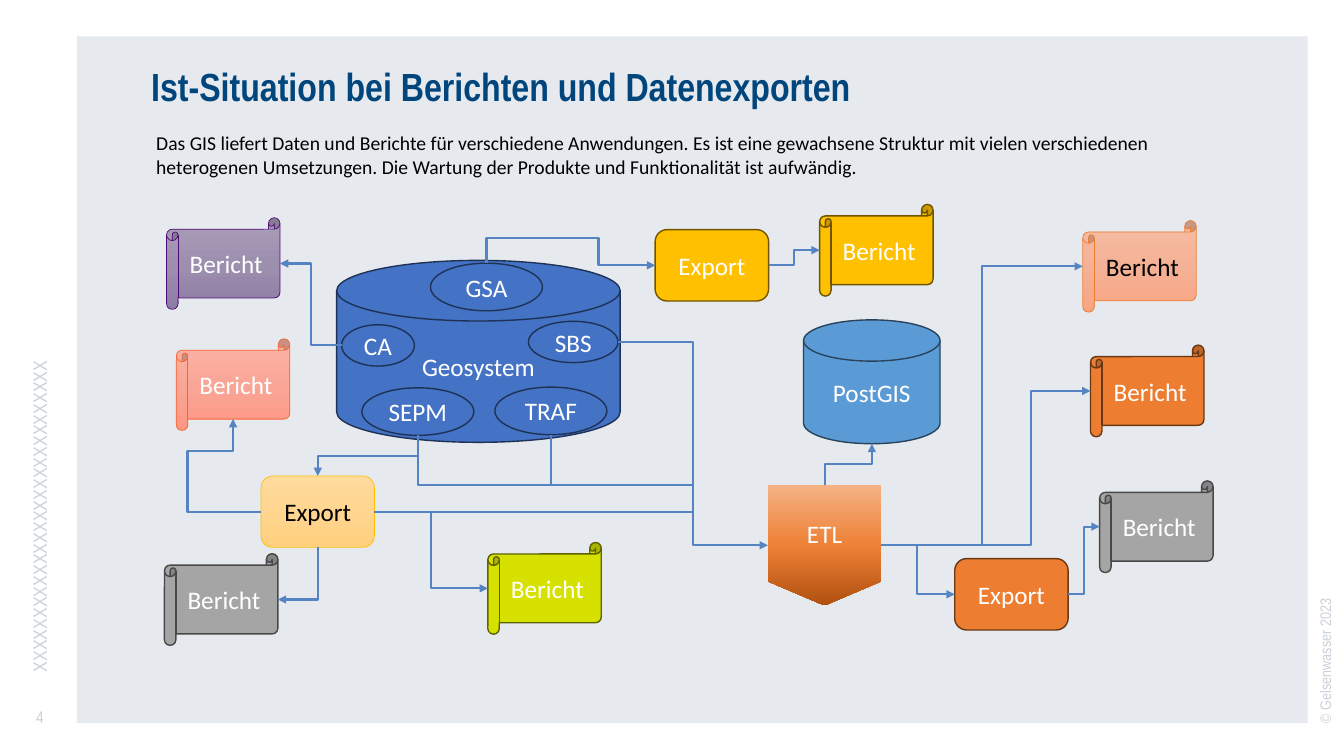
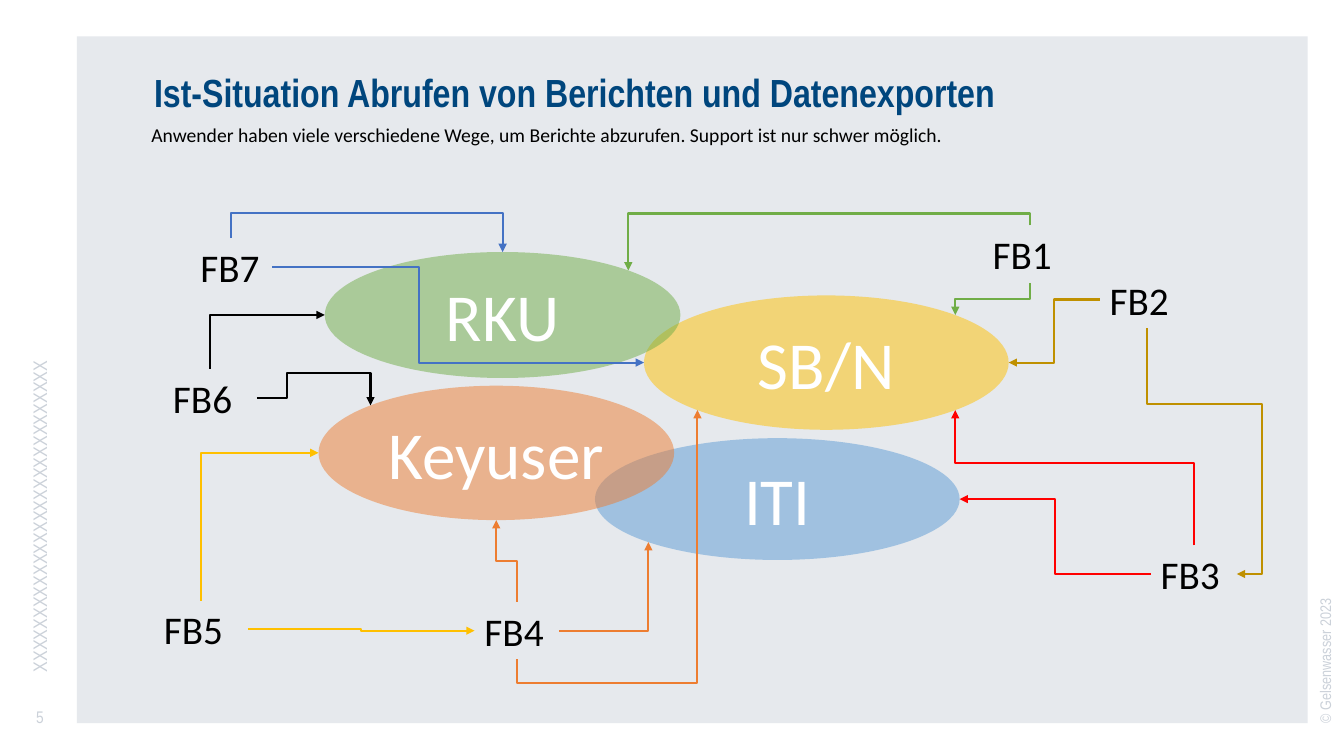
import pptx
import pptx.util
import pptx.dml.color
import pptx.enum.shapes
import pptx.enum.text
import pptx.oxml.ns
import lxml.etree

Pt = pptx.util.Pt
RGB = pptx.dml.color.RGBColor.from_string
qn = pptx.oxml.ns.qn
KIND = pptx.enum.shapes.MSO_SHAPE
BEND = pptx.enum.shapes.MSO_CONNECTOR
ANCHOR = pptx.enum.text.MSO_ANCHOR
ALIGN = pptx.enum.text.PP_ALIGN
add = lxml.etree.SubElement


# Colours and type sizes
class Theme:
    panel, muted, navy = "E6E9ED", "CBD1D9", "00467D"
    black, white = "000000", "FFFFFF"
    route = "5684C3"
    head, body = "Arial Narrow", "Calibri"
    title, word, label, large, huge = 28, 14, 18, 28, 48
    note, page = 11, 12
    # fill, edge, edge width, text colour
    skin = {
        "blue": ("4472C4", "1E3256", 1, white),
        "sky": ("5B9BD5", "28445D", 1, white),
        "orange": ("ED7D31", "683715", 1, white),
        "gold": ("FFC000", "705400", 1, white),
        "lime": ("D7E100", "5E6300", 1, white),
        "grey": ("A5A5A5", "484848", 1, white),
        "rose": (("F7BDA5", "F5B196", "F8A582"), "ED7D31", 0.5, black),
        "sand": (("FFDB9E", "FFD590", "FFD07C"), "FFC000", 0.5, black),
        "plum": (("A99EBA", "9D90AF", "8D7CA5"), "500A78", 0.5, white),
        "coral": (("FCB4A5", "FAA697", "FE9783"), "F56432", 0.5, white),
        "rust": (("F4B183", "EE8137", "B0500F"), None, 0, white),
    }


# Connection sites as fractions of width and height
SIDES = [(0.5, 0), (0, 0.5), (0.5, 1), (1, 0.5)]
LOW, HIGH = 0.1464, 0.8536
SITES = {
    KIND.HORIZONTAL_SCROLL: [(0.5, 0.125), (0, 0.5), (0.5, 0.875), (1, 0.5)],
    KIND.FLOWCHART_MAGNETIC_DISK: [(0.5, 0.33), (0.5, 0), (0, 0.5), (0.5, 1), (1, 0.5)],
    KIND.OVAL: [(0.5, 0), (LOW, LOW), (0, 0.5), (LOW, HIGH),
                (0.5, 1), (HIGH, HIGH), (1, 0.5), (HIGH, LOW)],
}


def node(slide, kind, at, text="", size=Theme.label, ink=Theme.black, fill=None,
         edge=None, width=0, alpha=None, pad=None, mid=True, align=ALIGN.CENTER,
         face=Theme.body, bold=False, turn=0, space=None):
    """Place a shape, a text box ("text") or the title ("title") with its text."""
    box = [Pt(v) for v in at]
    if kind == "title":
        shape = slide.shapes.title
    elif kind == "text":
        shape = slide.shapes.add_textbox(*box)
    else:
        shape = slide.shapes.add_shape(kind, *box)
        shape.shadow.inherit = False
        if isinstance(fill, tuple):
            shape.fill.gradient()
            shape.fill.gradient_angle = 270
            stops = shape.element.spPr.find(qn("a:gradFill")).find(qn("a:gsLst"))
            for stop in list(stops):
                stops.remove(stop)
            for pos, tint in zip((0, 50000, 100000), fill):
                add(add(stops, qn("a:gs"), pos=str(pos)), qn("a:srgbClr"), val=tint)
        else:
            shape.fill.solid()
            shape.fill.fore_color.rgb = RGB(fill)
        if alpha:
            tint = shape.element.spPr.find(qn("a:solidFill"))[0]
            add(tint, qn("a:alpha"), val=str(alpha * 1000))
        if edge:
            shape.line.color.rgb = RGB(edge)
            shape.line.width = Pt(width)
        else:
            shape.line.fill.background()
    for name, value in zip(("left", "top", "width", "height"), box):
        setattr(shape, name, value)
    shape.rotation = turn
    if not text:
        return shape
    frame = shape.text_frame
    form = {"word_wrap": True, "auto_size": pptx.enum.text.MSO_AUTO_SIZE.NONE,
            "vertical_anchor": ANCHOR.MIDDLE if mid else ANCHOR.TOP}
    if pad is not None:
        form.update({"margin_" + s: Pt(pad) for s in ("left", "top", "right", "bottom")})
    for name, value in form.items():
        setattr(frame, name, value)
    para = frame.paragraphs[0]
    para.alignment = align
    if space:
        para.line_spacing = Pt(space)
    run = para.add_run()
    run.text = text
    for name, value in {"name": face, "size": Pt(size), "bold": bold}.items():
        setattr(run.font, name, value)
    run.font.color.rgb = RGB(ink)
    return shape


def link(slide, start, begin, goal, end, turns, tint):
    """Join two sites; turns are bend positions, None is halfway.
    A goal given as a point gets no arrowhead."""
    spots = []
    for shape, site in ((start, begin), (goal, end)):
        if isinstance(shape, tuple):
            spots.append([Pt(v) for v in shape])
        else:
            fx, fy = SITES.get(shape.element.prst, SIDES)[site]
            spots.append([int(shape.left + fx * shape.width),
                          int(shape.top + fy * shape.height)])
    (x1, y1), (x2, y2) = spots
    dx, dy = x2 - x1, y2 - y1
    if min(abs(dx), abs(dy)) < Pt(0.1):
        line = slide.shapes.add_connector(BEND.STRAIGHT, x1, y1, x2, y2)
        if begin < 4:
            line.begin_connect(start, begin)
    else:
        line = slide.shapes.add_connector(BEND.ELBOW, 0, 0, 0, 0)
        down = fx_down = SITES.get(start.element.prst, SIDES)[begin][0] not in (0, 1)
        wide, high = (abs(dy), abs(dx)) if down else (abs(dx), abs(dy))
        place = {"left": (x1 + x2 - wide) // 2, "top": (y1 + y2 - high) // 2,
                 "width": wide, "height": high}
        for name, value in place.items():
            setattr(line, name, value)
        # A route that leaves vertically is a quarter turn of a level one
        frame = line.element.spPr.find(qn("a:xfrm"))
        flips = (dy < 0, dx > 0) if down else (dx < 0, dy < 0)
        for name, on in zip(("flipH", "flipV"), flips):
            if on:
                frame.set(name, "1")
        if down:
            frame.set("rot", "5400000")
        geom = line.element.spPr.find(qn("a:prstGeom"))
        geom.set("prst", f"bentConnector{len(turns) + 2}")
        axes = [(x1, dx), (y1, dy)]
        if down:
            axes.reverse()
        for i, (stop, (base, span)) in enumerate(zip(turns, axes), 1):
            part = 0.5 if stop is None else (Pt(stop) - base) / span
            add(geom.find(qn("a:avLst")), qn("a:gd"), name=f"adj{i}",
                fmla=f"val {round(part * 100000)}")
        ends = line.element.nvCxnSpPr.find(qn("p:cNvCxnSpPr"))
        for tag, shape, site in (("a:stCxn", start, begin), ("a:endCxn", goal, end)):
            if not isinstance(shape, tuple):
                add(ends, qn(tag), id=str(shape.shape_id), idx=str(site))
    line.line.color.rgb = RGB(tint)
    line.line.width = Pt(1.5)
    if not isinstance(goal, tuple):
        add(line.element.spPr.find(qn("a:ln")), qn("a:tailEnd"), type="triangle")
    add(line.element.spPr, qn("a:effectLst"))


deck = pptx.Presentation()
deck.slide_width, deck.slide_height = Pt(960), Pt(540)
plan = deck.slide_layouts[5]

# Titles, introductions and page marks
pages = [
    ("4", "Ist-Situation bei Berichten und Datenexporten", (108, 43), (104.5, 90, 762, 41),
     "Das GIS liefert Daten und Berichte für verschiedene Anwendungen. Es ist eine "
     "gewachsene Struktur mit vielen verschiedenen heterogenen Umsetzungen. Die Wartung "
     "der Produkte und Funktionalität ist aufwändig."),
    ("5", "Ist-Situation Abrufen von Berichten und Datenexporten", (110, 47.5),
     (101, 84, 762, 24.5),
     "Anwender haben viele verschiedene Wege, um Berichte abzurufen. "
     "Support ist nur schwer möglich."),
]
side = dict(ink=Theme.muted, face=Theme.head, pad=0)
for page, title, spot, area, intro in pages:
    slide = deck.slides.add_slide(plan)
    if page == "4":
        # Panel and copyright line belong to the layout
        panel = node(slide, KIND.RECTANGLE, (55, 26, 879, 490.5), fill=Theme.panel)
        right = node(slide, "text", (785, 348.5, 323, 13.5), "© Gelsenwasser 2023",
                     Theme.note, mid=False, align=ALIGN.LEFT, turn=270, **side)
        for i, shape in enumerate((panel, right)):
            shape.element.nvSpPr.cNvPr.set("id", str(20 + i))
            plan.shapes.element.insert(2 + i, shape.element)
    node(slide, "title", (*spot, 777, 44), title, Theme.title, Theme.navy, pad=0,
         mid=False, align=ALIGN.LEFT, face=Theme.head, bold=True, space=35)
    node(slide, "text", (-134, 309.5, 324, 17.5), "X" * 29, Theme.word,
         align=ALIGN.LEFT, turn=270, **side)
    node(slide, "text", (12, 497.5, 33, 29), page, Theme.page, **side)
    node(slide, "text", area, intro, Theme.word, mid=False, align=ALIGN.LEFT)
first, second = deck.slides

# Slide 1: systems, exports and reports
DISK, OVAL = KIND.FLOWCHART_MAGNETIC_DISK, KIND.OVAL
ROUND, SCROLL = KIND.ROUNDED_RECTANGLE, KIND.HORIZONTAL_SCROLL
parts = {
    "core": (DISK, (240.5, 186, 202.5, 130), "Geosystem", "blue"),
    "store": (DISK, (574, 228.5, 97.5, 88.5), "PostGIS", "sky"),
    "etl": (KIND.FLOWCHART_OFFPAGE_CONNECTOR, (548.5, 346.5, 81, 86), "ETL", "rust"),
    "sepm": (OVAL, (258.5, 277, 80, 34), "SEPM", "blue"),
    "ca": (OVAL, (244, 232, 52, 29.5), "CA", "blue"),
    "sbs": (OVAL, (377.5, 229.5, 64, 29.5), "SBS", "blue"),
    "traf": (OVAL, (353.5, 276.5, 80, 34), "TRAF", "blue"),
    "gsa": (OVAL, (307.5, 188, 80, 34), "GSA", "blue"),
}
for skin, left, top in (("sand", 186.5, 340), ("orange", 682, 399), ("gold", 468, 164)):
    parts["export " + skin] = (ROUND, (left, top, 81, 51), "Export", skin)
for name, skin, left, top in (
        ("rose", "rose", 773.5, 157.5), ("plum", "plum", 119, 155.5),
        ("orange", "orange", 779, 246.5), ("lime", "lime", 348.5, 387.5),
        ("coral", "coral", 126, 242), ("west", "grey", 117.5, 395.5),
        ("east", "grey", 785.5, 343.5), ("gold", "gold", 585.5, 146)):
    parts[name] = (SCROLL, (left, top, 81, 65.5), "Bericht", skin)
items = {}
for name, (kind, at, text, skin) in parts.items():
    fill, edge, width, ink = Theme.skin[skin]
    items[name] = node(first, kind, at, text, ink=ink, fill=fill, edge=edge, width=width)
items.update({"upper": (496, 346.5), "lower": (496, 365.5), "drop": (393.5, 346.5)})

for start, begin, goal, end, turns in (
        ("etl", 3, "export orange", 1, [655]),
        ("ca", 2, "plum", 3, [None]),
        ("sepm", 4, "export sand", 0, [None]),
        ("etl", 3, "orange", 1, [736.5]),
        ("gsa", 0, "export gold", 1, [170, 427.5]),
        ("etl", 3, "rose", 1, [None]),
        ("export sand", 1, "coral", 2, [134, 322]),
        ("export sand", 2, "west", 3, []),
        ("export orange", 3, "east", 1, [None]),
        ("sbs", 6, "etl", 1, [None]),
        ("etl", 0, "store", 3, [None]),
        ("export sand", 3, "lime", 1, [None]),
        ("export gold", 3, "gold", 1, [None]),
        ("sepm", 4, "upper", 0, []),
        ("traf", 4, "drop", 0, []),
        ("export sand", 3, "lower", 0, [])):
    link(first, items[start], begin, items[goal], end, turns, Theme.route)

# Slide 2: contact groups and departments
items = {}
for text, fill, at in (
        ("SB/N", "FFC000", (460, 211, 260.5, 96)), ("RKU", "70AD47", (232, 180, 254, 90)),
        ("ITI", "5B9BD5", (425, 313, 260.5, 87)),
        ("Keyuser", "ED7D31", (227.5, 275.5, 254, 96))):
    items[text] = node(second, OVAL, at, text, Theme.huge, Theme.white, fill, alpha=50)
for text, left, top, width in (
        ("FB1", 702, 161, 67), ("FB2", 785.5, 193.5, 67), ("FB3", 822, 389.5, 61.5),
        ("FB5", 110, 429, 67), ("FB4", 339, 430, 60.5), ("FB6", 116.5, 263.5, 67),
        ("FB7", 136, 170, 58.5)):
    items[text] = node(second, "text", (left, top, width, 41), text, Theme.large,
                       mid=False, align=ALIGN.LEFT)

tints = {"FB1": "70AD47", "FB2": "BF9000", "FB3": "FF0000", "FB4": "ED7D31",
         "FB5": "FFC000", "FB6": Theme.black, "FB7": "4472C4"}
for start, begin, goal, end, turns in (
        ("FB7", 3, "SB/N", 2, [299.5]), ("FB7", 0, "RKU", 0, [152]),
        ("FB4", 3, "ITI", 3, []), ("FB4", 0, "Keyuser", 4, [None]),
        ("FB1", 2, "SB/N", 7, [None]), ("FB1", 0, "RKU", 7, [152.5]),
        ("FB2", 1, "SB/N", 6, [None]), ("FB3", 0, "SB/N", 5, [330.5]),
        ("FB3", 1, "ITI", 6, [None]), ("FB6", 0, "RKU", 2, []),
        ("FB6", 3, "Keyuser", 1, [205, 266.5]), ("FB5", 0, "Keyuser", 2, []),
        ("FB5", 3, "FB4", 1, [None]), ("FB2", 2, "FB3", 3, [288.5, 901.5]),
        ("FB4", 2, "SB/N", 3, [488])):
    link(second, items[start], begin, items[goal], end, turns, tints[start])

deck.save("out.pptx")
